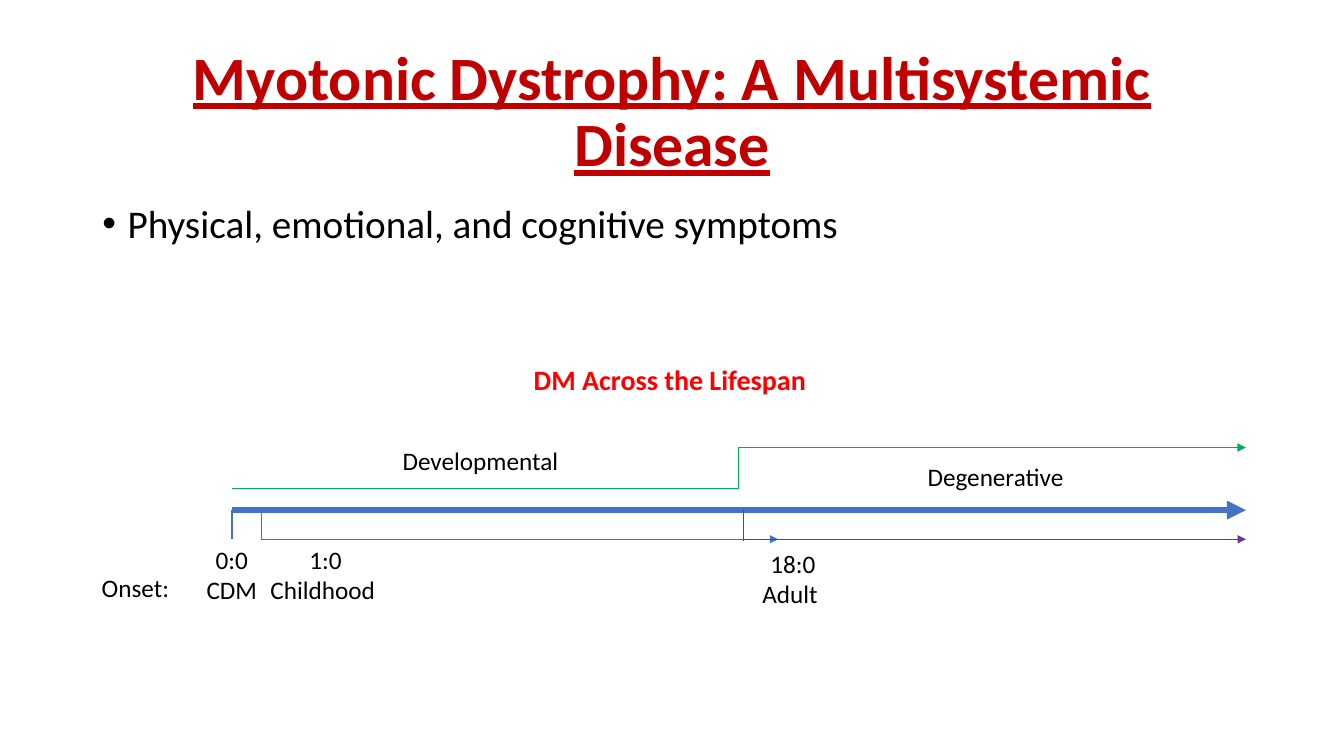
from lxml.etree import SubElement
from pptx import Presentation
from pptx.dml.color import RGBColor
from pptx.enum.shapes import MSO_CONNECTOR as Connector
from pptx.enum.text import MSO_ANCHOR as Anchor, MSO_AUTO_SIZE as AutoSize, PP_ALIGN as Align
from pptx.oxml.ns import qn
from pptx.util import Inches, Pt

FONT = "Calibri"
BLACK, DARK_RED, RED = "000000", "C00000", "FF0000"
BLUE, GREEN, PURPLE = "4472C4", "00B050", "7030A0"

TITLE = "Myotonic Dystrophy: A Multisystemic Disease"
BULLET = "Physical, emotional, and cognitive symptoms"
HEADING = "DM Across the Lifespan"

BIRTH, CHILD, ADULT, END = 17.25, 19.42, 55.28, 92.7
AXIS, ONSET_ROW = 67.47, 71.33
LABEL_HEIGHT, ONSET_HEIGHT, PHASE_WIDTH = 5.33, 9.47, 36.98

LABELS = [
    (["Onset:"], (6.83, 75.07, 7.8, LABEL_HEIGHT), Align.LEFT),
    (["0:0", "CDM"], (14.55, ONSET_ROW, 5.4, ONSET_HEIGHT), Align.CENTER),
    (["Developmental"], (BIRTH, 58.27, PHASE_WIDTH, LABEL_HEIGHT), Align.CENTER),
    (["Degenerative"], (55.58, 60.4, PHASE_WIDTH, LABEL_HEIGHT), Align.CENTER),
    (["1:0", "Childhood "], (19.2, ONSET_ROW, 10.05, ONSET_HEIGHT), Align.CENTER),
    (["18:0", "Adult "], (ADULT, 71.87, 7.43, ONSET_HEIGHT), Align.CENTER),
]

LINES = [
    (Connector.STRAIGHT, (BIRTH, AXIS, END, AXIS), BLUE, 4.5, True),
    (Connector.STRAIGHT, (BIRTH, ONSET_ROW, BIRTH, AXIS), BLUE, 1.5, False),
    (Connector.ELBOW, (BIRTH, 64.67, END, 59.2), GREEN, 0.5, True),
    (Connector.STRAIGHT, (CHILD, AXIS, CHILD, ONSET_ROW), BLUE, 0.5, False),
    (Connector.STRAIGHT, (CHILD, ONSET_ROW, 57.9, ONSET_ROW), BLUE, 0.5, True),
    (Connector.STRAIGHT, (ADULT, AXIS, ADULT, 71.6), PURPLE, 0.5, False),
    (Connector.STRAIGHT, (ADULT, ONSET_ROW, END, ONSET_ROW), PURPLE, 0.5, True),
]

presentation = Presentation()
presentation.slide_width, presentation.slide_height = Inches(13.33), Inches(7.5)
slide = presentation.slides.add_slide(presentation.slide_layouts[6])


def color(value):
    return RGBColor.from_string(value)


def place(shares):
    sides = (presentation.slide_width, presentation.slide_height) * 2
    return [round(share * side / 100) for share, side in zip(shares, sides)]


def add_text(lines, shares, size, ink=BLACK, align=Align.CENTER, bold=False, grow=False):
    shape = slide.shapes.add_textbox(*place(shares))
    frame = shape.text_frame
    frame.word_wrap = True
    frame.auto_size = AutoSize.SHAPE_TO_FIT_TEXT if grow else AutoSize.NONE
    for index, line in enumerate(lines):
        paragraph = frame.add_paragraph() if index else frame.paragraphs[0]
        paragraph.alignment = align
        run = paragraph.add_run()
        run.text = line
        run.font.name, run.font.size, run.font.bold = FONT, Pt(size), bold
        run.font.color.rgb = color(ink)
    return frame


def add_line(kind, shares, ink, width, arrow):
    line = slide.shapes.add_connector(kind, *place(shares))
    line.line.color.rgb = color(ink)
    line.line.width = Pt(width)
    if arrow:
        SubElement(line.line._get_or_add_ln(), qn("a:tailEnd"), type="triangle")
    SubElement(line._element.spPr, qn("a:effectLst"))


title = add_text([TITLE], (6.88, 5.33, 86.25, 19.33), 44, DARK_RED, bold=True)
title.vertical_anchor = Anchor.MIDDLE
title.paragraphs[0].line_spacing = 0.9
title.paragraphs[0].runs[0].font.underline = True

body = add_text([BULLET], (6.88, 26.4, 86.25, 63.47), 28, align=Align.LEFT)
bullet = body.paragraphs[0]
bullet.line_spacing, bullet.space_before = 0.9, Pt(10)
properties = bullet._p.get_or_add_pPr()
properties.set("marL", str(Inches(0.25)))
properties.set("indent", str(Inches(-0.25)))
SubElement(properties, qn("a:buFont"), typeface="Arial")
SubElement(properties, qn("a:buChar"), char="•")

add_text([HEADING], (24.38, 47.33, 50.93, 5.87), 20, RED, bold=True, grow=True)
for line in LINES:
    add_line(*line)
for lines, shares, align in LABELS:
    add_text(lines, shares, 18, align=align, grow=True)

presentation.save("out.pptx")
